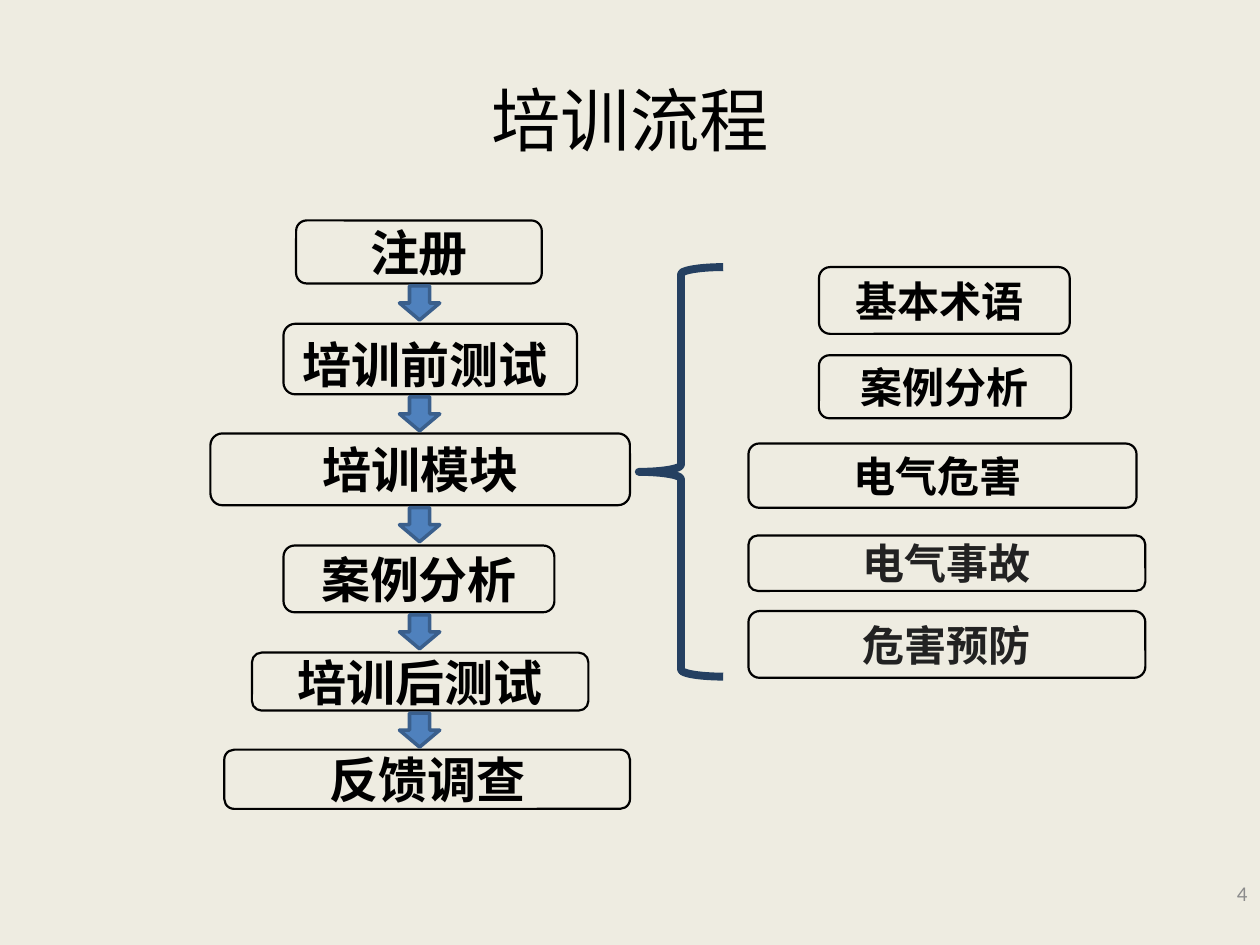
from pptx import Presentation
from pptx.dml.color import RGBColor
from pptx.enum.shapes import MSO_SHAPE
from pptx.enum.text import MSO_ANCHOR, PP_ALIGN
from pptx.util import Inches, Pt

ROUNDED = MSO_SHAPE.ROUNDED_RECTANGLE
DOWN_ARROW = MSO_SHAPE.DOWN_ARROW
LEFT_BRACE = MSO_SHAPE.LEFT_BRACE
MIDDLE = MSO_ANCHOR.MIDDLE
CENTER, RIGHT = PP_ALIGN.CENTER, PP_ALIGN.RIGHT

COLUMNS, ROWS = 10, 7.5
TITLE_ONLY = 5
ARROW_CENTRE, ARROW_WIDTH, ARROW_HEIGHT, ARROW_GAP = 3.33, 0.32, 0.27, 0.02

MAIN_FONT = {"name": "Times New Roman", "size": Pt(28), "bold": True}
MODULE_FONT = {**MAIN_FONT, "size": Pt(24)}
WEB_FONT = {**MODULE_FONT, "name": "Roboto"}
TITLE_FONT = {"name": "Times New Roman", "size": Pt(39.6), "bold": False}
NUMBER_FONT = {"name": "Calibri", "size": Pt(12)}

# text, (left, top, width, height), extra inset above the text
STEPS = [
    ("注册", (2.35, 1.75, 1.95, 0.5), 0),
    ("培训前测试 ", (2.25, 2.57, 2.33, 0.56), 0.08),
    ("培训模块", (1.67, 3.44, 3.33, 0.57), 0),
    ("案例分析", (2.25, 4.33, 2.15, 0.53), 0),
    ("培训后测试", (2, 5.18, 2.67, 0.46), 0),
    ("反馈调查", (1.78, 5.95, 3.22, 0.47), 0),
]
# text, (left, top, width, height), font, text colour
MODULES = [
    ("基本术语 ", (6.5, 2.12, 1.99, 0.53), MODULE_FONT, "000000"),
    ("案例分析", (6.5, 2.82, 2, 0.5), MODULE_FONT, "000000"),
    ("电气危害 ", (5.94, 3.52, 3.08, 0.51), MODULE_FONT, "000000"),
    ("电气事故", (5.94, 4.25, 3.15, 0.44), WEB_FONT, "222222"),
    ("危害预防", (5.94, 4.85, 3.15, 0.53), WEB_FONT, "222222"),
]


def colour(value):
    return RGBColor.from_string(value)


class SlideBuilder:
    """Holds the slide, its grid and the style of its elements."""

    def __init__(self, presentation):
        self.column = presentation.slide_width / COLUMNS
        self.row = presentation.slide_height / ROWS
        self.slide = presentation.slides.add_slide(
            presentation.slide_layouts[TITLE_ONLY])

    def place(self, left, top, width, height):
        """Turn grid columns and rows into slide lengths."""
        return (round(left * self.column), round(top * self.row),
                round(width * self.column), round(height * self.row))

    def background(self, fill):
        self.slide.background.fill.solid()
        self.slide.background.fill.fore_color.rgb = colour(fill)

    def set_text(self, shape, text, font, text_colour="000000",
                 alignment=CENTER, inset_top=0):
        frame = shape.text_frame
        settings = {"word_wrap": True, "vertical_anchor": MIDDLE,
                    "margin_top": round(inset_top * self.row),
                    "margin_bottom": 0}
        for name, value in settings.items():
            setattr(frame, name, value)
        paragraph = frame.paragraphs[0]
        paragraph.alignment = alignment
        run = paragraph.add_run()
        run.text = text
        for name, value in font.items():
            setattr(run.font, name, value)
        run.font.color.rgb = colour(text_colour)

    def title(self, text, box):
        shape = self.slide.shapes.title
        shape.left, shape.top, shape.width, shape.height = self.place(*box)
        self.set_text(shape, text, TITLE_FONT)

    def label(self, text, box, font, text_colour, alignment):
        shape = self.slide.shapes.add_textbox(*self.place(*box))
        self.set_text(shape, text, font, text_colour, alignment)

    def shape(self, kind, box, line, weight, fill=None):
        shape = self.slide.shapes.add_shape(kind, *self.place(*box))
        shape.shadow.inherit = False
        shape.line.color.rgb = colour(line)
        shape.line.width = Pt(weight)
        if fill:
            shape.fill.solid()
            shape.fill.fore_color.rgb = colour(fill)
        else:
            shape.fill.background()
        return shape

    def box(self, text, box, font, text_colour="000000", inset_top=0):
        shape = self.shape(ROUNDED, box, "000000", 1.25)
        self.set_text(shape, text, font, text_colour, inset_top=inset_top)

    def arrow_below(self, box):
        _, top, _, height = box
        self.shape(DOWN_ARROW,
                   (ARROW_CENTRE - ARROW_WIDTH / 2, top + height + ARROW_GAP,
                    ARROW_WIDTH, ARROW_HEIGHT),
                   "3A5F8C", 2, "4F81BD")

    def brace(self, box):
        self.shape(LEFT_BRACE, box, "254061", 4.5)


def main():
    presentation = Presentation()
    presentation.slide_width = Inches(10)
    presentation.slide_height = Inches(7.5)

    builder = SlideBuilder(presentation)
    builder.background("EEECE1")
    builder.title("培训流程", (0.5, 0.63, 9, 0.62))
    builder.label("4", (7.75, 6.89, 2.25, 0.4), NUMBER_FONT, "8C8C8C", RIGHT)
    for text, box, inset_top in STEPS:
        builder.box(text, box, MAIN_FONT, inset_top=inset_top)
    for _, box, _ in STEPS[:-1]:
        builder.arrow_below(box)
    builder.brace((5.07, 2.12, 0.67, 3.25))
    for text, box, font, text_colour in MODULES:
        builder.box(text, box, font, text_colour)

    presentation.save("out.pptx")


if __name__ == "__main__":
    main()
